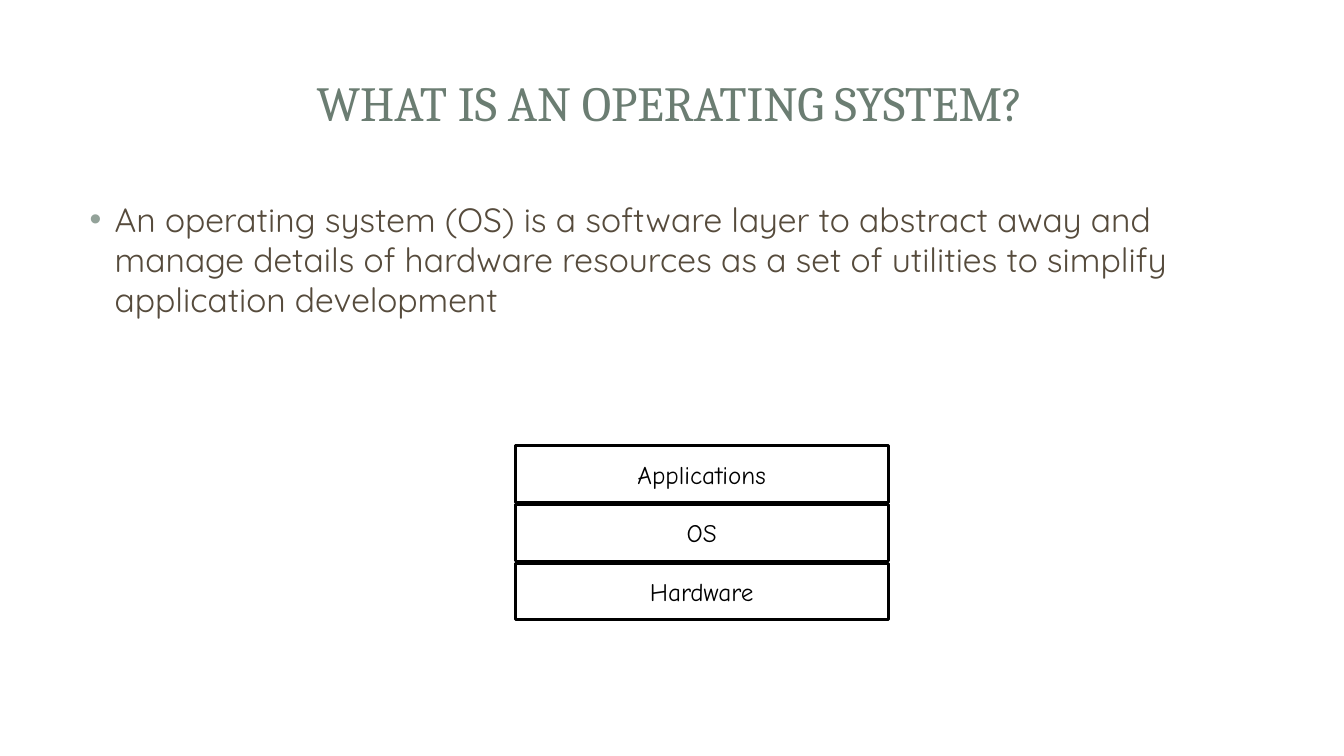
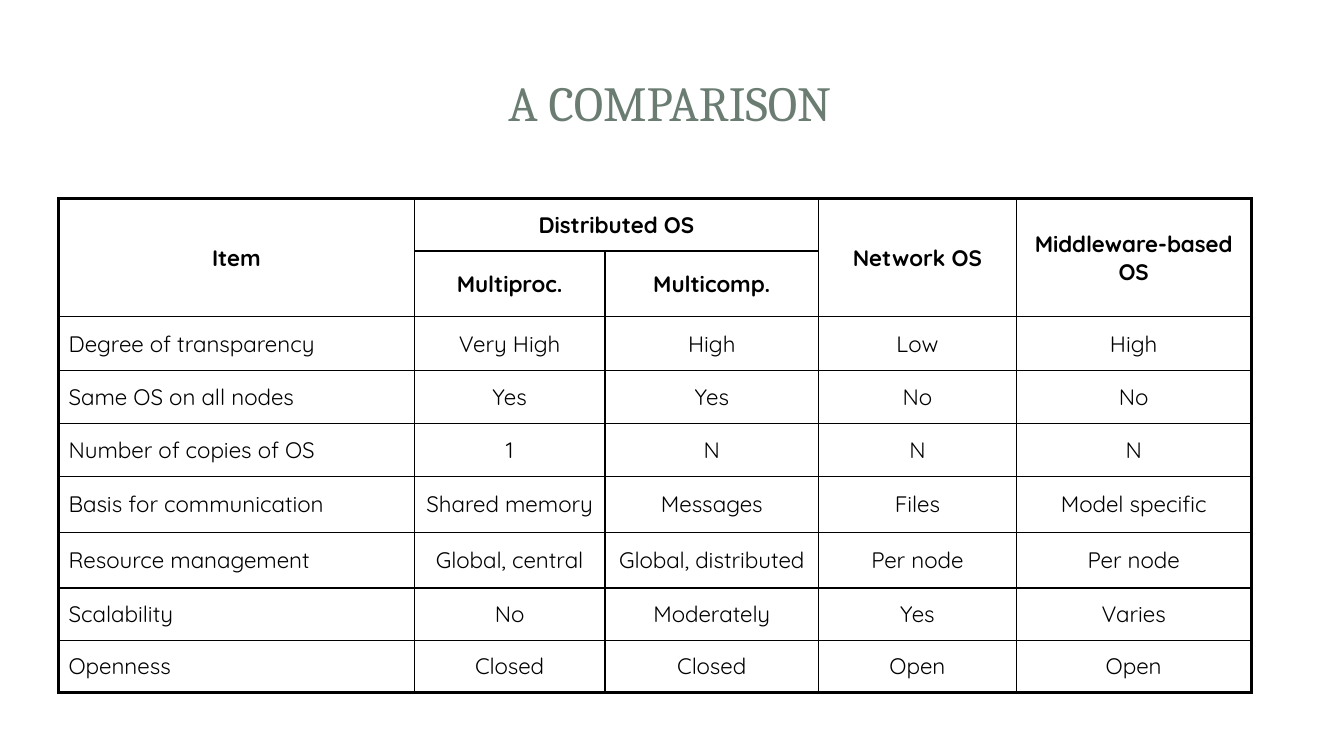
from pptx import Presentation
from pptx.dml.color import RGBColor
from pptx.enum.shapes import MSO_SHAPE
from pptx.enum.text import MSO_ANCHOR as ANCHOR, MSO_AUTO_SIZE as AUTO, PP_ALIGN as ALIGN
from pptx.oxml import parse_xml
from pptx.oxml.ns import nsdecls, qn
from pptx.util import Inches, Pt

BLACK, WHITE = "000000", "FFFFFF"
SAGE, BROWN, BULLET = "6B7D72", "564B3C", "93A299"
TITLE_FONT, BODY_FONT, BOX_FONT = "Cambria", "Quicksand", "Comic Neue"
TITLE_BOX = (0.62, 0.44, 12.05, 1.14)
TITLE_ONLY = 5
# Background panels from back to front: shape, box, opacity in percent
PANELS = [
    (MSO_SHAPE.ROUNDED_RECTANGLE, (0.13, 0.11, 13.07, 7.29), 100),
    (MSO_SHAPE.RECTANGLE, (0.4, 0.3, 12.53, 1.45), 83),
    (MSO_SHAPE.RECTANGLE, (0.54, 0.41, 12.22, 1.22), 100),
]

LAYERS = ["Applications", "OS", "Hardware"]
DEFINITION = (
    "An operating system (OS) is a software layer to abstract away and "
    "manage details of hardware resources as a set of utilities to simplify "
    "application development"
)

COL_WIDTHS = [3.53, 1.89, 2.12, 1.96, 2.33]
ROW_HEIGHTS = [0.52, 0.65, 0.53, 0.53, 0.52, 0.56, 0.55, 0.52, 0.52]
HEADER_ROWS = 2
COMPARISON = [
    ["Item", "Distributed OS", "", "Network OS", "Middleware-based OS"],
    ["", "Multiproc.", "Multicomp.", "", ""],
    ["Degree of transparency", "Very High", "High", "Low", "High"],
    ["Same OS on all nodes", "Yes", "Yes", "No", "No"],
    ["Number of copies of OS", "1", "N", "N", "N"],
    ["Basis for communication", "Shared memory", "Messages", "Files", "Model specific"],
    ["Resource management", "Global, central", "Global, distributed", "Per node", "Per node"],
    ["Scalability", "No", "Moderately", "Yes", "Varies"],
    ["Openness", "Closed", "Closed", "Open", "Open"],
]
# Merged header cells: first and last (row, column)
MERGES = [((0, 0), (1, 0)), ((0, 1), (0, 2)), ((0, 3), (1, 3)), ((0, 4), (1, 4))]


def rgb(color):
    return RGBColor.from_string(color)


def inches(box):
    return [Inches(v) for v in box]


def write(tf, text, font, size, color, align=ALIGN.CENTER, bold=False):
    """Fill a text frame with one formatted paragraph."""
    tf.text = text
    p = tf.paragraphs[0]
    p.alignment = align
    for r in p.runs:
        r.font.name, r.font.size, r.font.bold = font, Pt(size), bold
        r.font.color.rgb = rgb(color)
    return p


def add_white_shape(slide, kind, box):
    sp = slide.shapes.add_shape(kind, *inches(box))
    sp.shadow.inherit = False
    sp.fill.solid()
    sp.fill.fore_color.rgb = rgb(WHITE)
    return sp


def add_panels(slide):
    """Place the background panels behind the title."""
    for kind, box, opacity in PANELS:
        sp = add_white_shape(slide, kind, box)
        sp.line.fill.background()
        if kind == MSO_SHAPE.ROUNDED_RECTANGLE:
            sp.adjustments[0] = 0.02
        if opacity < 100:
            color = sp._element.spPr.find(qn("a:solidFill"))[0]
            color.append(parse_xml(f'<a:alpha {nsdecls("a")} val="{opacity * 1000}"/>'))
        slide.shapes.title._element.addprevious(sp._element)


def add_titled_slide(prs, title):
    slide = prs.slides.add_slide(prs.slide_layouts[TITLE_ONLY])
    add_panels(slide)
    sp = slide.shapes.title
    sp.left, sp.top, sp.width, sp.height = inches(TITLE_BOX)
    tf = sp.text_frame
    tf.auto_size = AUTO.NONE
    tf.vertical_anchor = ANCHOR.MIDDLE
    write(tf, title, TITLE_FONT, 35, SAGE)
    return slide


def add_bullet(slide, box, text):
    tf = slide.shapes.add_textbox(*inches(box)).text_frame
    tf.word_wrap = True
    p = write(tf, text, BODY_FONT, 24, BROWN, ALIGN.LEFT)
    # Hanging indent and coloured bullet
    pPr = p._p.get_or_add_pPr()
    pPr.set("marL", str(Inches(0.38)))
    pPr.set("indent", str(Inches(-0.25)))
    pPr.append(parse_xml(f'<a:buClr {nsdecls("a")}><a:srgbClr val="{BULLET}"/></a:buClr>'))
    pPr.append(parse_xml(f'<a:buFont {nsdecls("a")} typeface="Arial"/>'))
    pPr.append(parse_xml(f'<a:buChar {nsdecls("a")} char="•"/>'))


def add_layer_stack(slide, box, layers, gap=0.02):
    """Stack equal boxes from top to bottom inside the given box."""
    left, top, width, height = box
    layer_height = (height - gap * (len(layers) - 1)) / len(layers)
    for i, name in enumerate(layers):
        layer_box = (left, top + i * (layer_height + gap), width, layer_height)
        sp = add_white_shape(slide, MSO_SHAPE.RECTANGLE, layer_box)
        sp.line.color.rgb = rgb(BLACK)
        sp.line.width = Pt(2)
        tf = sp.text_frame
        tf.word_wrap = False
        tf.vertical_anchor = ANCHOR.MIDDLE
        write(tf, name, BOX_FONT, 18, BLACK)


def set_borders(cell, widths):
    tcPr = cell._tc.get_or_add_tcPr()
    for side, width in widths.items():
        tcPr.append(parse_xml(
            f'<a:ln{side} {nsdecls("a")} w="{Pt(width)}"><a:solidFill>'
            f'<a:srgbClr val="{BLACK}"/></a:solidFill></a:ln{side}>'))


def add_comparison(slide, box, rows):
    n_rows, n_cols = len(rows), len(rows[0])
    table = slide.shapes.add_table(n_rows, n_cols, *inches(box)).table
    table.first_row = table.horz_banding = False
    for col, width in zip(table.columns, COL_WIDTHS):
        col.width = Inches(width)
    for row, height in zip(table.rows, ROW_HEIGHTS):
        row.height = Inches(height)
    for first, last in MERGES:
        table.cell(*first).merge(table.cell(*last))

    for i, texts in enumerate(rows):
        for j, text in enumerate(texts):
            cell = table.cell(i, j)
            # Thick outer frame, thin inner grid
            outer = {"L": j == 0, "R": j == n_cols - 1, "T": i == 0, "B": i == n_rows - 1}
            set_borders(cell, {side: 2.25 if edge else 1 for side, edge in outer.items()})
            cell.fill.solid()
            cell.fill.fore_color.rgb = rgb(WHITE)
            cell.vertical_anchor = ANCHOR.MIDDLE
            if text:
                header = i < HEADER_ROWS
                align = ALIGN.CENTER if header or j else ALIGN.LEFT
                write(cell.text_frame, text, BODY_FONT, 16, BLACK, align, header)


def definition_slide(prs):
    slide = add_titled_slide(prs, "WHAT IS AN OPERATING SYSTEM?")
    add_bullet(slide, (0.66, 1.92, 12, 4.78), DEFINITION)
    add_layer_stack(slide, (5.11, 4.42, 3.7, 1.73), LAYERS)


def comparison_slide(prs):
    slide = add_titled_slide(prs, "A COMPARISON")
    add_comparison(slide, (0.58, 1.97, sum(COL_WIDTHS), sum(ROW_HEIGHTS)), COMPARISON)


def main():
    prs = Presentation()
    prs.slide_width, prs.slide_height = Inches(13.33), Inches(7.5)
    definition_slide(prs)
    comparison_slide(prs)
    prs.save("out.pptx")


if __name__ == "__main__":
    main()
